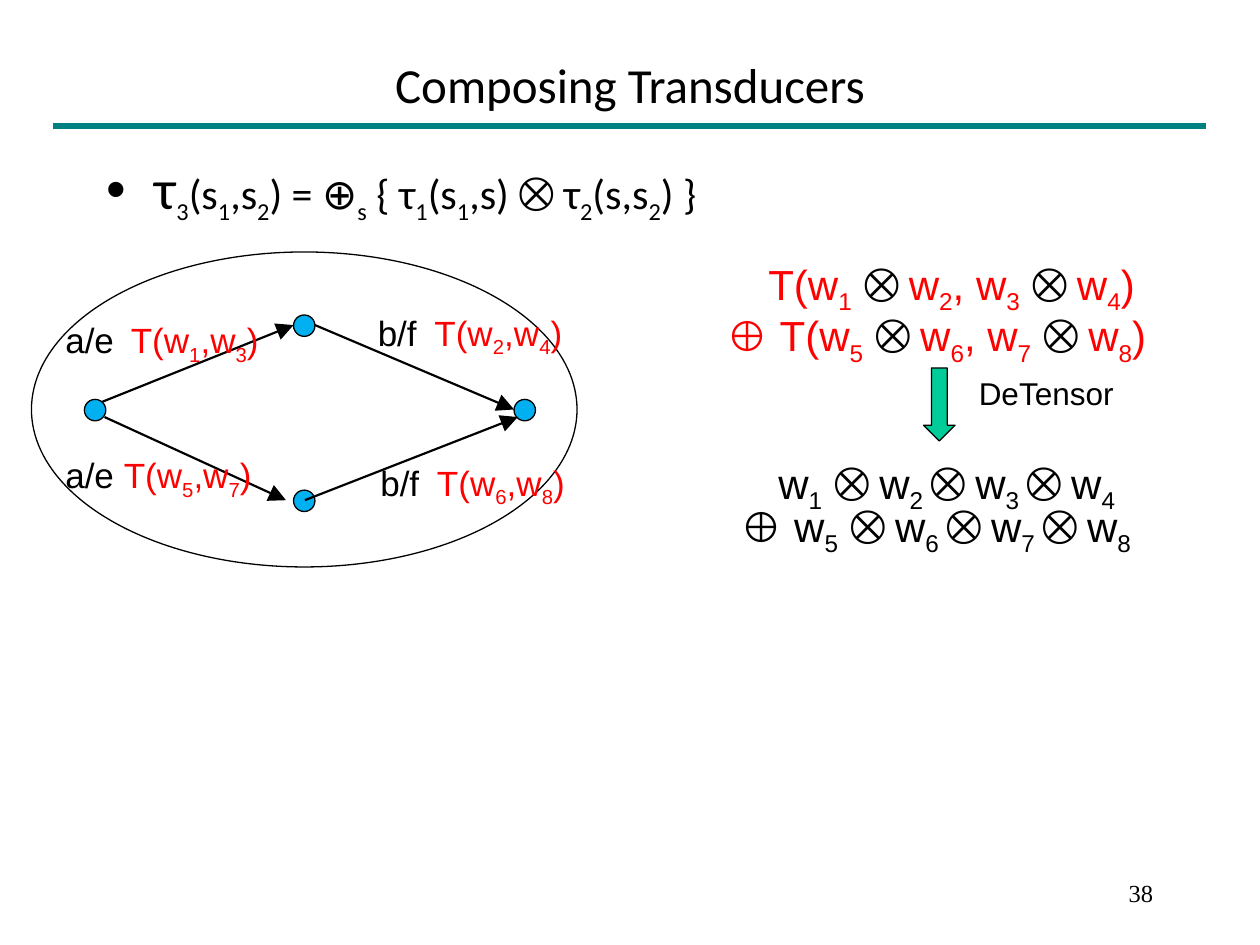
from dataclasses import dataclass
from typing import Optional

from lxml.etree import SubElement
from pptx import Presentation
from pptx.dml.color import RGBColor
from pptx.enum.shapes import MSO_CONNECTOR as Connector, MSO_SHAPE as Preset
from pptx.enum.text import MSO_ANCHOR as Anchor, PP_ALIGN as Align
from pptx.oxml.ns import qn
from pptx.util import Inches, Pt

BLACK, RED, TEAL = "000000", "FF0000", "008080"
NODE_BLUE, ARROW_GREEN = "00B0F0", "00CC99"
NODE_SIZE = 0.17
LABEL_WIDTH = 1.9
TENSOR = "⨂ "


@dataclass
class Edge:
    start: tuple[float, float]
    end: tuple[float, float]


@dataclass
class EdgeLabel:
    left: float
    top: float
    symbols: str
    weights: str
    tab: Optional[float] = None


@dataclass
class Formula:
    left: float
    top: float
    width: float
    text: str
    color: str


NODES = [(0.67, 3.17), (4.08, 3.17), (2.33, 2.5), (2.33, 3.89)]
EDGES = [
    Edge((0.81, 3.19), (2.33, 2.58)),
    Edge((2.5, 2.58), (4.08, 3.25)),
    Edge((0.83, 3.31), (2.27, 3.97)),
    Edge((2.42, 3.97), (4.11, 3.31)),
]
EDGE_LABELS = [
    EdgeLabel(0.42, 2.48, "a/e\t", "T(w_1_,w_3_)", 0.52),
    EdgeLabel(2.9, 2.42, "b/f\t", "T(w_2_,w_4_)", 0.45),
    EdgeLabel(0.42, 3.55, "a/e ", "T(w_5_,w_7_)"),
    EdgeLabel(2.92, 3.61, "b/f\t", "T(w_6_,w_8_)", 0.45),
]
FORMULAS = [
    Formula(6, 2, 3.5, "T(w_1_ ⨂ w_2_, w_3_ ⨂ w_4_)", RED),
    Formula(5.67, 2.41, 3.9, "⊕ T(w_5_ ⨂ w_6_, w_7_ ⨂ w_8_)", RED),
    Formula(6.08, 3.58, 3.3, "w_1_ ⨂ w_2 _⨂ w_3 _⨂ w_4", BLACK),
    Formula(5.78, 3.92, 3.7, "⊕ w_5_ ⨂ w_6 _⨂ w_7 _⨂ w_8", BLACK),
]


def rgb(value: str) -> RGBColor:
    return RGBColor.from_string(value)


def add_text_box(slide, left: float, top: float, width: float, height: float):
    frame = slide.shapes.add_textbox(
        Inches(left), Inches(top), Inches(width), Inches(height)
    ).text_frame
    frame.word_wrap = True
    return frame


def add_run(paragraph, text: str, size: float, font: str = "Arial",
            color: str = BLACK, subscript: bool = False) -> None:
    run = paragraph.add_run()
    run.text = text
    run.font.size = Pt(size)
    run.font.name = font
    run.font.color.rgb = rgb(color)
    if subscript:
        run.font._element.set("baseline", "-25000")


def add_formula(paragraph, formula: str, size: float, font: str = "Arial",
                color: str = BLACK) -> None:
    for index, piece in enumerate(formula.split("_")):
        if index % 2:
            add_run(paragraph, piece, size, font, color, subscript=True)
            continue
        before, tensor, after = piece.partition(TENSOR)
        if before:
            add_run(paragraph, before, size, font, color)
        if tensor:
            add_run(paragraph, tensor, size, "Cambria", BLACK)
        if after:
            add_run(paragraph, after, size, font, color)


def add_shape(slide, preset, left: float, top: float, width: float, height: float,
              fill: Optional[str] = None):
    shape = slide.shapes.add_shape(
        preset, Inches(left), Inches(top), Inches(width), Inches(height)
    )
    shape.shadow.inherit = False
    if fill:
        shape.fill.solid()
        shape.fill.fore_color.rgb = rgb(fill)
    else:
        shape.fill.background()
    shape.line.color.rgb = rgb(BLACK)
    shape.line.width = Pt(0.75)
    return shape


def add_line(slide, edge: Edge, color: str, width: float, arrow: bool = False) -> None:
    points = [Inches(value) for value in (*edge.start, *edge.end)]
    line = slide.shapes.add_connector(Connector.STRAIGHT, *points)
    line.line.color.rgb = rgb(color)
    line.line.width = Pt(width)
    if arrow:
        SubElement(line.line._get_or_add_ln(), qn("a:tailEnd"),
                   type="triangle", w="lg", len="lg")
    SubElement(line._element.spPr, qn("a:effectLst"))


def add_bullet(paragraph) -> None:
    properties = paragraph._p.get_or_add_pPr()
    properties.set("marL", str(Inches(0.38)))
    properties.set("indent", str(-Inches(0.38)))
    SubElement(properties, qn("a:buFont"), typeface="Arial")
    SubElement(properties, qn("a:buChar"), char="•")


def add_tab_stop(paragraph, position: float) -> None:
    tabs = SubElement(paragraph._p.get_or_add_pPr(), qn("a:tabLst"))
    SubElement(tabs, qn("a:tab"), pos=str(Inches(position)), algn="l")


def add_edge_label(slide, label: EdgeLabel) -> None:
    frame = add_text_box(slide, label.left, label.top, LABEL_WIDTH, 0.44)
    paragraph = frame.paragraphs[0]
    if label.tab:
        add_tab_stop(paragraph, label.tab)
    add_run(paragraph, label.symbols, 20)
    add_formula(paragraph, label.weights, 20, color=RED)


def add_header(slide) -> None:
    add_line(slide, Edge((0.42, 1), (9.57, 1)), TEAL, 4)
    title = add_text_box(slide, 0.75, 0.33, 8.5, 0.67)
    title.vertical_anchor = Anchor.MIDDLE
    title.paragraphs[0].alignment = Align.CENTER
    add_run(title.paragraphs[0], "Composing Transducers", 28, "Calibri")

    number = add_text_box(slide, 7.17, 6.92, 2.08, 0.42).paragraphs[0]
    number.alignment = Align.RIGHT
    add_run(number, "38", 14, "Times New Roman")


def add_definition(slide) -> None:
    paragraph = add_text_box(slide, 0.75, 1.17, 8.5, 0.67).paragraphs[0]
    add_bullet(paragraph)
    add_run(paragraph, "τ", 32, "Calibri")
    definition = "_3_(s_1_,s_2_) = ⊕_s_ { τ_1_(s_1_,s) ⨂ τ_2_(s,s_2_) }"
    add_formula(paragraph, definition, 24, "Calibri")


def add_transducer(slide) -> None:
    add_shape(slide, Preset.OVAL, 0.25, 2, 4.33, 2.5)
    for left, top in NODES:
        add_shape(slide, Preset.OVAL, left, top, NODE_SIZE, NODE_SIZE, NODE_BLUE)
    for edge in EDGES:
        add_line(slide, edge, BLACK, 1.25, arrow=True)
    for label in EDGE_LABELS:
        add_edge_label(slide, label)


def add_weights(slide) -> None:
    for formula in FORMULAS:
        frame = add_text_box(slide, formula.left, formula.top, formula.width, 0.5)
        add_formula(frame.paragraphs[0], formula.text, 24, color=formula.color)
    add_shape(slide, Preset.DOWN_ARROW, 7.33, 2.92, 0.25, 0.58, ARROW_GREEN)
    caption = add_text_box(slide, 7.67, 2.92, 1.4, 0.4)
    add_run(caption.paragraphs[0], "DeTensor", 18)


def main() -> None:
    presentation = Presentation()
    presentation.slide_width = Inches(10)
    presentation.slide_height = Inches(7.5)
    slide = presentation.slides.add_slide(presentation.slide_layouts[6])
    add_header(slide)
    add_definition(slide)
    add_transducer(slide)
    add_weights(slide)
    presentation.save("out.pptx")


if __name__ == "__main__":
    main()
